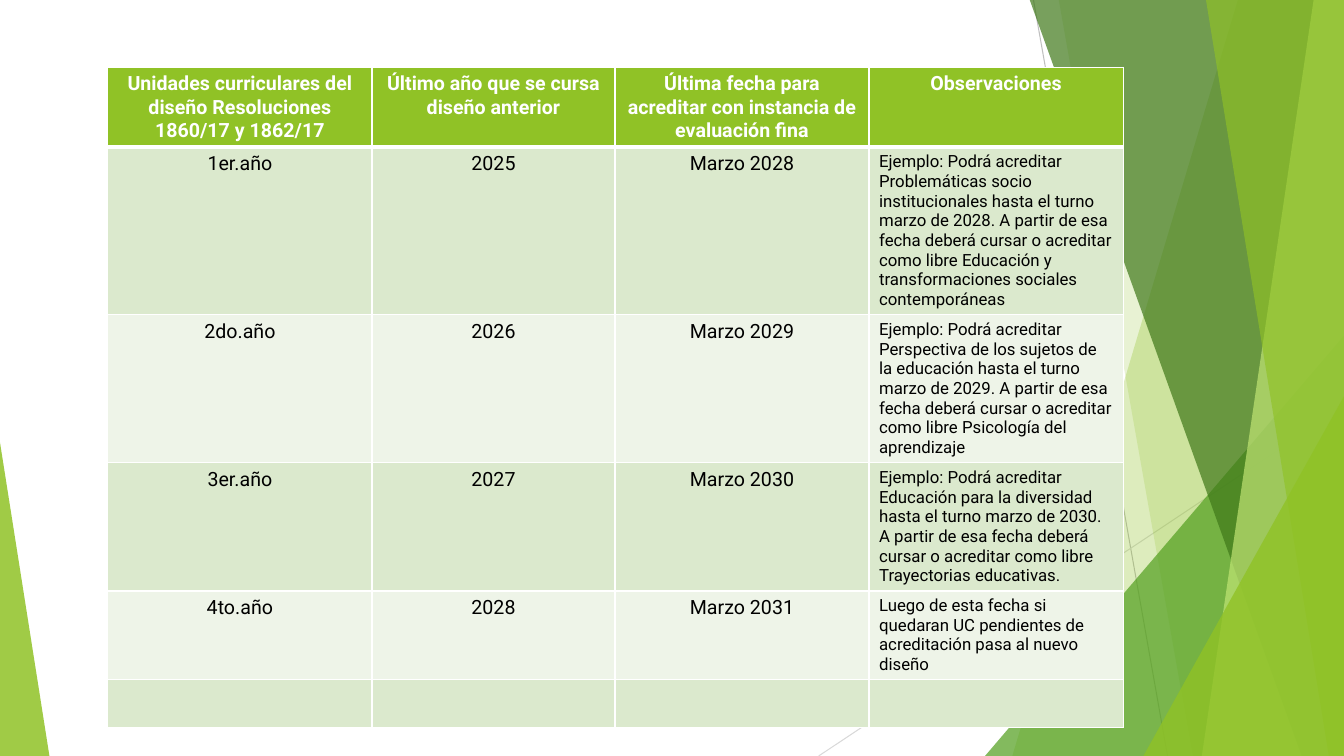
"""Build the slide with the calendar for accrediting curricular units."""
from dataclasses import dataclass

from lxml import etree
from pptx import Presentation
from pptx import util as u
from pptx.dml.color import RGBColor
from pptx.enum import shapes, text
from pptx.oxml import ns

WHITE = RGBColor(0xFF, 0xFF, 0xFF)
BLACK = RGBColor(0x00, 0x00, 0x00)
SILVER = RGBColor(0xBF, 0xBF, 0xBF)
LIGHT_GRAY = RGBColor(0xD9, 0xD9, 0xD9)
GREEN = RGBColor(0x90, 0xC2, 0x26)
MID_GREEN = RGBColor(0x54, 0xA0, 0x21)
DARK_GREEN = RGBColor(0x3F, 0x78, 0x19)
LIME = RGBColor(0xC0, 0xE4, 0x74)
BAND = RGBColor(0xDB, 0xE9, 0xCD)
PALE_BAND = RGBColor(0xEE, 0xF4, 0xE8)

FONT = "Roboto"
WIDTH, HEIGHT = 13.33, 7.5
TOP = -0.01


@dataclass(frozen=True)
class Ray:
    start: tuple[float, float]
    end: tuple[float, float]
    color: RGBColor


@dataclass(frozen=True)
class Band:
    """A strip from its slanted left edge to the right edge of the slide."""
    top_x: float
    bottom_x: float
    color: RGBColor
    opacity: int


@dataclass(frozen=True)
class Triangle:
    """A right triangle standing on the bottom edge of the slide."""
    left: float
    top: float
    width: float
    apex: float
    color: RGBColor
    opacity: int


RAYS = [
    Ray((10.25, 0), (11.58, HEIGHT), SILVER),
    Ray((WIDTH, 4.03), (8.12, HEIGHT), LIGHT_GRAY),
]
FACETS = [
    Band(12.28, 10.04, GREEN, 30),
    Band(10.5, 11.83, GREEN, 20),
    Triangle(9.77, 3.33, 3.56, 1, MID_GREEN, 72),
    Band(10.21, 12.91, DARK_GREEN, 70),
    Band(13.03, 11.92, LIME, 70),
    Band(11.96, 13.18, GREEN, 65),
    Triangle(11.34, 3.93, 1.99, 1, GREEN, 80),
    Triangle(0, 4.39, 0.49, 0, GREEN, 85),
]

COLUMN_WIDTHS = [2.62, 2.41, 2.52, 2.52]
ROW_HEIGHTS = [0.77, 1.6, 1.41, 1.22, 0.85, 0.47]
ROWS = [
    ("Unidades curriculares del diseño Resoluciones 1860/17 y 1862/17",
     "Último año que se cursa diseño anterior",
     "Última fecha para acreditar con instancia de evaluación fina",
     "Observaciones"),
    ("1er.año", "2025", "Marzo 2028",
     "Ejemplo: Podrá acreditar Problemáticas socio institucionales hasta el "
     "turno marzo de 2028. A partir de esa fecha deberá cursar o acreditar "
     "como libre Educación y transformaciones sociales contemporáneas"),
    ("2do.año", "2026", "Marzo 2029",
     "Ejemplo: Podrá acreditar Perspectiva de los sujetos de la educación "
     "hasta el turno marzo de 2029. A partir de esa fecha deberá cursar o "
     "acreditar como libre Psicología del aprendizaje"),
    ("3er.año", "2027", "Marzo 2030",
     "Ejemplo: Podrá acreditar Educación para la diversidad hasta el turno "
     "marzo de 2030. A partir de esa fecha deberá cursar o acreditar como "
     "libre Trayectorias educativas."),
    ("4to.año", "2028", "Marzo 2031",
     "Luego de esta fecha si quedaran UC pendientes de acreditación pasa al "
     "nuevo diseño"),
    ("", "", "", ""),
]


def draw_ray(s, ray: Ray) -> None:
    x1, y1, x2, y2 = map(u.Inches, ray.start + ray.end)
    line = s.shapes.add_connector(shapes.MSO_CONNECTOR.STRAIGHT, x1, y1, x2, y2)
    line.line.color.rgb = ray.color
    line.line.width = u.Pt(0.75)
    etree.SubElement(line._element.spPr, ns.qn("a:effectLst"))


def paint(sp, color: RGBColor, opacity: int) -> None:
    sp.shadow.inherit = False
    sp.line.fill.background()
    sp.fill.solid()
    sp.fill.fore_color.rgb = color
    tint = sp._element.spPr.find(ns.qn("a:solidFill"))[0]
    etree.SubElement(tint, ns.qn("a:alpha"), val=str(opacity * 1000))


def draw_facet(s, facet: Band | Triangle) -> None:
    if isinstance(facet, Band):
        corners = [(facet.top_x, TOP), (WIDTH, TOP), (WIDTH, HEIGHT),
                   (facet.bottom_x, HEIGHT)]
        points = [(u.Inches(x), u.Inches(y)) for x, y in corners]
        builder = s.shapes.build_freeform(*points[0])
        builder.add_line_segments(points[1:], close=True)
        sp = builder.convert_to_shape()
    else:
        sp = s.shapes.add_shape(
            shapes.MSO_SHAPE.ISOSCELES_TRIANGLE, u.Inches(facet.left),
            u.Inches(facet.top), u.Inches(facet.width),
            u.Inches(HEIGHT - facet.top))
        sp.adjustments[0] = facet.apex
    paint(sp, facet.color, facet.opacity)


def set_borders(cell, row: int) -> None:
    widths = {"lnL": 1, "lnR": 1, "lnT": 3 if row == 1 else 1,
              "lnB": 3 if row == 0 else 1}
    tc_pr = cell._tc.get_or_add_tcPr()
    for tag, width in widths.items():
        ln = etree.SubElement(tc_pr, ns.qn(f"a:{tag}"), w=str(u.Pt(width)))
        fill = etree.SubElement(ln, ns.qn("a:solidFill"))
        etree.SubElement(fill, ns.qn("a:srgbClr"), val=str(WHITE))


def fill_cell(cell, label: str, row: int, column: int) -> None:
    header = row == 0
    note = not header and column == len(COLUMN_WIDTHS) - 1
    set_borders(cell, row)
    cell.fill.solid()
    cell.fill.fore_color.rgb = GREEN if header else BAND if row % 2 else PALE_BAND
    if not label:
        return
    p = cell.text_frame.paragraphs[0]
    p.alignment = text.PP_ALIGN.LEFT if note else text.PP_ALIGN.CENTER
    r = p.add_run()
    r.text = label
    r.font.name = FONT
    r.font.size = u.Pt(12 if note else 14)
    r.font.bold = header
    r.font.color.rgb = WHITE if header else BLACK


def draw_table(s) -> None:
    table = s.shapes.add_table(
        len(ROWS), len(COLUMN_WIDTHS), u.Inches(1.07), u.Inches(0.67),
        u.Inches(sum(COLUMN_WIDTHS)), u.Inches(sum(ROW_HEIGHTS))).table
    table.horz_banding = False
    for column, width in zip(table.columns, COLUMN_WIDTHS):
        column.width = u.Inches(width)
    for i, (height, labels) in enumerate(zip(ROW_HEIGHTS, ROWS)):
        table.rows[i].height = u.Inches(height)
        for j, label in enumerate(labels):
            fill_cell(table.cell(i, j), label, i, j)


def main() -> None:
    prs = Presentation()
    prs.slide_width, prs.slide_height = u.Inches(WIDTH), u.Inches(HEIGHT)
    s = prs.slides.add_slide(prs.slide_layouts[6])
    for ray in RAYS:
        draw_ray(s, ray)
    for facet in FACETS:
        draw_facet(s, facet)
    draw_table(s)
    prs.save("out.pptx")


if __name__ == "__main__":
    main()
